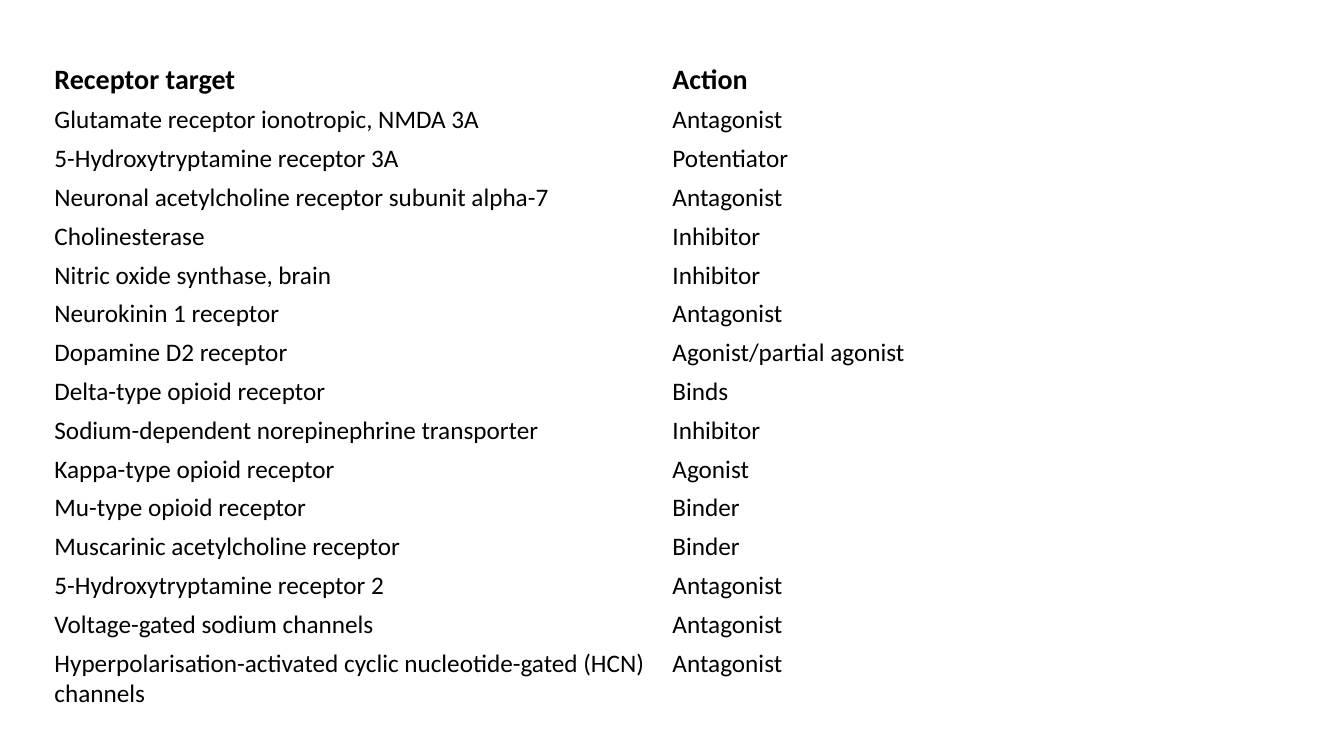
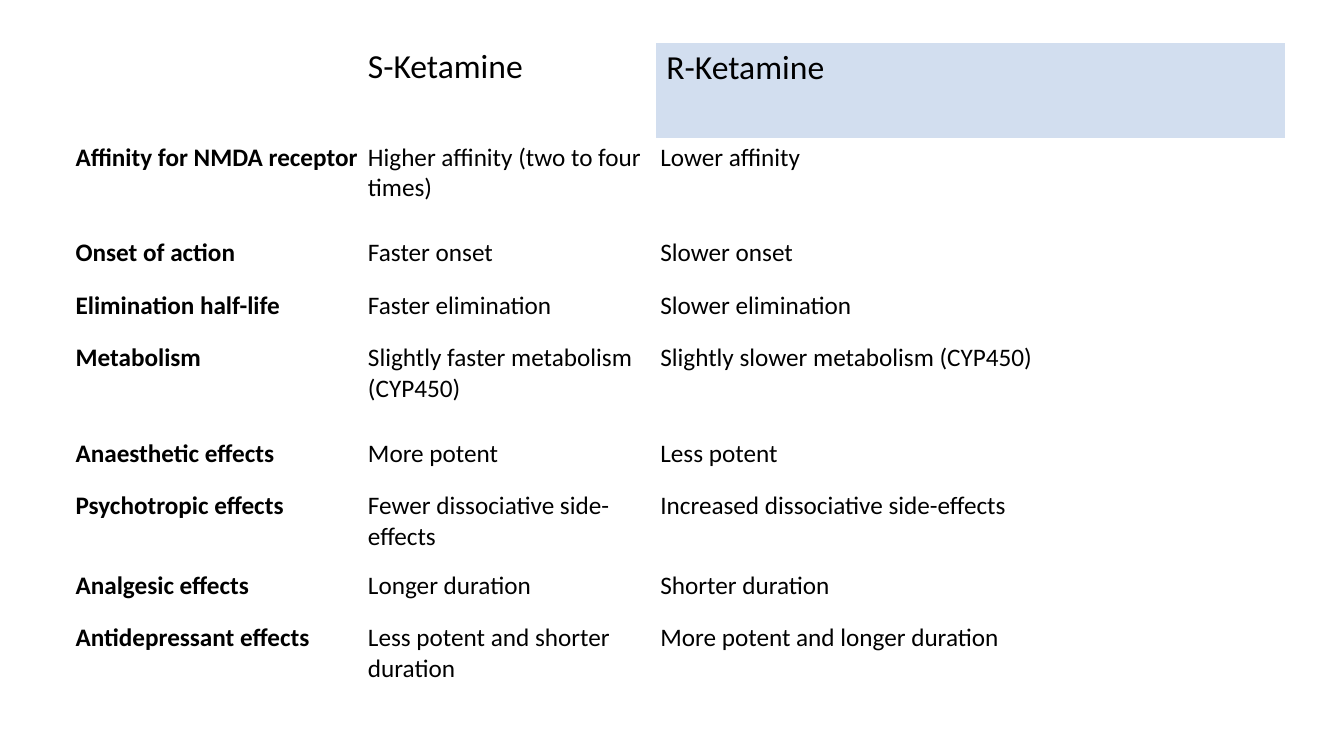
from dataclasses import dataclass

from lxml import etree
from pptx import Presentation
from pptx import util as u
from pptx.dml.color import RGBColor
from pptx.oxml import ns

EMU_PER_PX = 9144  # 100 px to the inch
NO_GRID_STYLE = "{2D5ABB26-0587-4C30-8999-92F81FD0307C}"


def px(length: int) -> u.Emu:
    return u.Emu(length * EMU_PER_PX)


@dataclass(frozen=True)
class Theme:
    font: str = "Calibri"
    ink: str = "000000"
    paper: str = "FFFFFF"
    highlight: str = "D2DEEF"
    body_size: int = 18
    inset: int = 4
    border_points: int = 1


THEME = Theme()


@dataclass(frozen=True)
class TableSpec:
    left: int
    top: int
    columns: tuple[int, ...]
    heights: tuple[int, ...]
    rows: tuple[tuple[str, ...], ...]
    header_size: int
    bold_header: bool = False
    bold_labels: bool = False
    highlighted: tuple[int, int] | None = None


# Receptor targets: equal rows, with a taller last row for two lines
RECEPTOR_ROWS = (
    ("Receptor target", "Action"),
    ("Glutamate receptor ionotropic, NMDA 3A", "Antagonist"),
    ("5-Hydroxytryptamine receptor 3A", "Potentiator"),
    ("Neuronal acetylcholine receptor subunit alpha-7", "Antagonist"),
    ("Cholinesterase", "Inhibitor"),
    ("Nitric oxide synthase, brain", "Inhibitor"),
    ("Neurokinin 1 receptor", "Antagonist"),
    ("Dopamine D2 receptor", "Agonist/partial agonist"),
    ("Delta-type opioid receptor", "Binds"),
    ("Sodium-dependent norepinephrine transporter", "Inhibitor"),
    ("Kappa-type opioid receptor", "Agonist"),
    ("Mu-type opioid receptor", "Binder"),
    ("Muscarinic acetylcholine receptor", "Binder"),
    ("5-Hydroxytryptamine receptor 2", "Antagonist"),
    ("Voltage-gated sodium channels", "Antagonist"),
    ("Hyperpolarisation-activated cyclic nucleotide-gated (HCN) channels", "Antagonist"),
)

# Comparison of the two enantiomers
ENANTIOMER_ROWS = (
    ("", "S-Ketamine", "R-Ketamine"),
    ("Affinity for NMDA receptor", "Higher affinity (two to four times)", "Lower affinity"),
    ("Onset of action", "Faster onset", "Slower onset"),
    ("Elimination half-life", "Faster elimination", "Slower elimination"),
    ("Metabolism", "Slightly faster metabolism (CYP450)", "Slightly slower metabolism (CYP450)"),
    ("Anaesthetic effects", "More potent", "Less potent"),
    ("Psychotropic effects", "Fewer dissociative side-effects", "Increased dissociative side-effects"),
    ("Analgesic effects", "Longer duration", "Shorter duration"),
    ("Antidepressant effects", "Less potent and shorter duration", "More potent and longer duration"),
)

TABLES = (
    TableSpec(50, 58, (613, 613), (38,) * 15 + (68,), RECEPTOR_ROWS,
              header_size=20, bold_header=True),
    TableSpec(71, 42, (290, 290, 624), (95, 95, 52, 52, 95, 52, 79, 52, 95),
              ENANTIOMER_ROWS, header_size=24, bold_labels=True, highlighted=(0, 2)),
)


def add_borders(cell) -> None:
    """Outline the right, top and bottom; lines come before the fill."""
    properties = cell._tc.get_or_add_tcPr()
    for index, side in enumerate(("lnR", "lnT", "lnB")):
        line = etree.Element(ns.qn(f"a:{side}"), w=str(u.Pt(THEME.border_points)))
        fill = etree.SubElement(line, ns.qn("a:solidFill"))
        etree.SubElement(fill, ns.qn("a:srgbClr"), val=THEME.paper)
        properties.insert(index, line)


def format_cell(cell, content: str, size: int, bold: bool, highlighted: bool) -> None:
    cell.fill.solid()
    cell.fill.fore_color.rgb = RGBColor.from_string(
        THEME.highlight if highlighted else THEME.paper)
    if highlighted:
        add_borders(cell)
    else:
        for side in ("left", "top", "right", "bottom"):
            setattr(cell, f"margin_{side}", px(THEME.inset))
    if not content:
        return
    run = cell.text_frame.paragraphs[0].add_run()
    run.text = content
    font_format = {"name": THEME.font, "size": u.Pt(size), "bold": bold}
    for attribute, value in font_format.items():
        setattr(run.font, attribute, value)
    run.font.color.rgb = RGBColor.from_string(THEME.ink)


def draw_table(slide, spec: TableSpec) -> None:
    shape = slide.shapes.add_table(
        len(spec.rows), len(spec.columns), px(spec.left), px(spec.top),
        px(sum(spec.columns)), px(sum(spec.heights)))
    table = shape.table
    table.first_row = table.horz_banding = False
    table._tbl.tblPr.find(ns.qn("a:tableStyleId")).text = NO_GRID_STYLE
    for column, width in zip(table.columns, spec.columns):
        column.width = px(width)
    for row, height in zip(table.rows, spec.heights):
        row.height = px(height)
    for row_index, row_texts in enumerate(spec.rows):
        is_header = row_index == 0
        for column_index, content in enumerate(row_texts):
            is_label = column_index == 0
            format_cell(
                table.cell(row_index, column_index), content,
                size=spec.header_size if is_header else THEME.body_size,
                bold=spec.bold_header if is_header else spec.bold_labels and is_label,
                highlighted=(row_index, column_index) == spec.highlighted)


def main() -> None:
    presentation = Presentation()
    presentation.slide_width, presentation.slide_height = px(1333), px(750)
    blank_layout = presentation.slide_layouts[6]
    for spec in TABLES:
        draw_table(presentation.slides.add_slide(blank_layout), spec)
    presentation.save("out.pptx")


if __name__ == "__main__":
    main()
